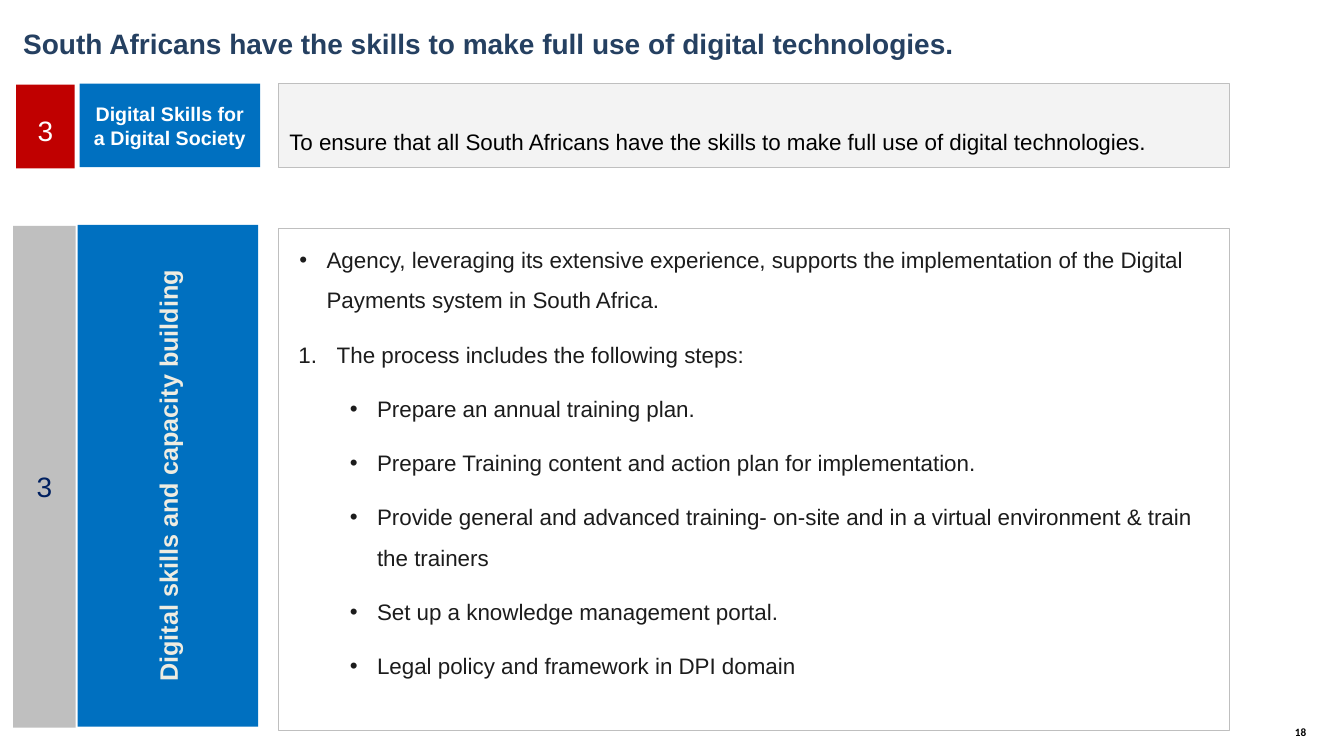
from lxml import etree
from pptx import Presentation
from pptx import util as u
from pptx.dml.color import RGBColor
from pptx.enum import shapes, text
from pptx.oxml import ns

NAVY = RGBColor(0x25, 0x40, 0x61)
DEEP_BLUE = RGBColor(0x00, 0x20, 0x60)
BLUE = RGBColor(0x00, 0x70, 0xC0)
RED = RGBColor(0xC0, 0x00, 0x00)
GREY = RGBColor(0xBF, 0xBF, 0xBF)
PALE_GREY = RGBColor(0xF3, 0xF3, 0xF3)
CREAM = RGBColor(0xEE, 0xEC, 0xE1)
INK = RGBColor(0x1C, 0x1C, 0x1C)
WHITE = RGBColor(0xFF, 0xFF, 0xFF)
BLACK = RGBColor(0x00, 0x00, 0x00)

TOP, MIDDLE = text.MSO_ANCHOR.TOP, text.MSO_ANCHOR.MIDDLE
LEFT, CENTER = text.PP_ALIGN.LEFT, text.PP_ALIGN.CENTER

# marker, level, left margin, hanging indent, wording
ACTIONS = [
    ("•", 0, 0.43, 0.27, "Agency, leveraging its extensive experience, supports the "
     "implementation of the Digital Payments system in South Africa."),
    ("1.", 0, 0.53, 0.38, "The process includes the following steps:"),
] + [("•", 1, 0.93, 0.27, step) for step in (
    "Prepare an annual training plan.",
    "Prepare Training content and action plan for implementation.",
    "Provide general and advanced training- on-site and in a virtual environment "
    "& train the trainers",
    "Set up a knowledge management portal.",
    "Legal policy and framework in DPI domain",
)]


class SlideBuilder:
    font = "Arial"

    def __init__(self, slide):
        self.slide = slide

    def style(self, paragraph, size, color, bold=False, align=LEFT, font=None):
        paragraph.alignment = align
        for run in paragraph.runs:
            run.font.name = font or self.font
            run.font.size = u.Pt(size)
            run.font.bold = bold
            run.font.color.rgb = color

    def place(self, shape, at):
        shape.left, shape.top, shape.width, shape.height = map(u.Inches, at)

    def title(self, wording, at):
        heading = self.slide.shapes.title
        self.place(heading, at)
        heading.text_frame.text = wording
        heading.text_frame.vertical_anchor = MIDDLE
        self.style(heading.text_frame.paragraphs[0], 20, NAVY, bold=True)

    def panel(self, at, fill=None, outline=None, inset=0.1, top_inset=None, anchor=MIDDLE):
        """Add a rectangle and return its text frame."""
        panel = self.slide.shapes.add_shape(
            shapes.MSO_SHAPE.RECTANGLE, *map(u.Inches, at))
        panel.shadow.inherit = False
        if fill is None:
            panel.fill.background()
        else:
            panel.fill.solid()
            panel.fill.fore_color.rgb = fill
        if outline is None:
            panel.line.fill.background()
        else:
            panel.line.color.rgb = outline
            panel.line.width = u.Pt(0.25)
        frame = panel.text_frame
        frame.word_wrap = True
        frame.vertical_anchor = anchor
        frame.margin_left = frame.margin_right = frame.margin_bottom = u.Inches(inset)
        frame.margin_top = u.Inches(inset if top_inset is None else top_inset)
        return frame

    def label(self, wording, at, fill, size, color, bold=False, vertical=False, **layout):
        frame = self.panel(at, fill, **layout)
        frame.text = wording
        if vertical:
            frame._txBody.bodyPr.set("vert", "vert270")
        self.style(frame.paragraphs[0], size, color, bold, CENTER)

    def objective(self, wording, at):
        frame = self.panel(at, PALE_GREY, GREY, inset=0.05, top_inset=0.36)
        frame.margin_left = u.Inches(0.11)
        frame.text = wording
        self.style(frame.paragraphs[0], 16, BLACK)

    def actions(self, items, at):
        frame = self.panel(at, outline=GREY, inset=0.05, anchor=TOP)
        for number, (marker, level, margin, hanging, wording) in enumerate(items):
            paragraph = frame.add_paragraph() if number else frame.paragraphs[0]
            paragraph.text = wording
            self.bullet(paragraph, marker, margin, hanging)
            paragraph.level = level
            paragraph.line_spacing = 1.5
            paragraph.space_after = u.Pt(10)
            self.style(paragraph, 16, INK)

    def bullet(self, paragraph, marker, margin, hanging):
        properties = paragraph._p.get_or_add_pPr()
        properties.set("marL", str(u.Inches(margin)))
        properties.set("indent", str(-u.Inches(hanging)))
        etree.SubElement(properties, ns.qn("a:buFont")).set("typeface", self.font)
        if marker == "•":
            etree.SubElement(properties, ns.qn("a:buChar")).set("char", marker)
        else:
            etree.SubElement(properties, ns.qn("a:buAutoNum")).set("type", "arabicPeriod")

    def page_number(self, wording, at):
        frame = self.slide.shapes.add_textbox(*map(u.Inches, at)).text_frame
        frame.word_wrap = True
        frame.vertical_anchor = MIDDLE
        frame.text = wording
        self.style(frame.paragraphs[0], 8, BLACK, True, CENTER, "Calibri")


def main():
    deck = Presentation()
    deck.slide_width, deck.slide_height = u.Inches(13.33), u.Inches(7.5)
    page = SlideBuilder(deck.slides.add_slide(deck.slide_layouts[5]))

    page.title("South Africans have the skills to make full use of digital technologies.",
               (0.13, 0.02, 12.76, 0.81))

    page.label("Digital Skills for a Digital Society", (0.79, 0.83, 1.79, 0.83),
               BLUE, 14, WHITE, bold=True)
    page.objective("To ensure that all South Africans have the skills to make full use "
                   "of digital technologies.", (2.76, 0.83, 9.43, 0.83))
    page.label("3", (0.16, 0.84, 0.58, 0.83), RED, 20, WHITE, top_inset=0.29, anchor=TOP)

    page.label("Digital skills and capacity building", (0.77, 2.23, 1.79, 4.98),
               BLUE, 18, CREAM, bold=True, vertical=True)
    page.actions(ACTIONS, (2.76, 2.26, 9.43, 4.98))
    page.label("3", (0.13, 2.24, 0.62, 4.98), GREY, 20, DEEP_BLUE, top_inset=0.29)

    page.page_number("18", (12.68, 7.12, 0.44, 0.29))
    deck.save("out.pptx")


if __name__ == "__main__":
    main()
